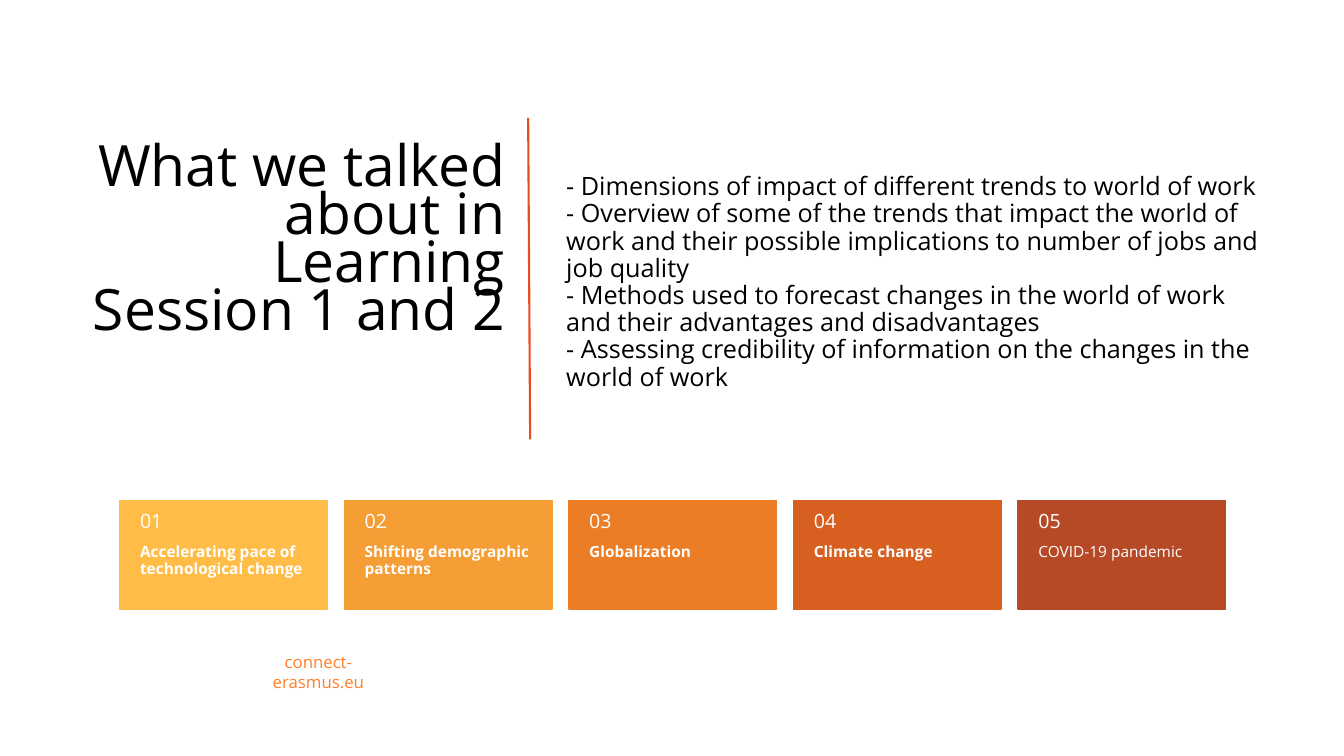
from lxml import etree
from pptx import Presentation
from pptx.dml.color import RGBColor
from pptx.enum import shapes, text
from pptx.oxml import ns
from pptx.util import Cm, Pt

FONT = "Open Sans"
COLOURS = {"text": "000000", "card text": "FFFFFF", "link": "FF7F2A", "divider": "E84C22"}

HEADING = "What we talked about in Learning Session 1 and 2"
TOPICS = [
    "- Dimensions of impact of different trends to world of work",
    "- Overview of some of the trends that impact the world of work and their "
    "possible implications to number of jobs and job quality",
    "- Methods used to forecast changes in the world of work and their advantages "
    "and disadvantages",
    "- Assessing credibility of information on the changes in the world of work",
]
# Label, fill colour, bold
TRENDS = [
    ("Accelerating pace of technological change", "FFBD47", True),
    ("Shifting demographic patterns", "F69E36", True),
    ("Globalization", "EB7D26", True),
    ("Climate change", "D75F20", True),
    ("COVID-19 pandemic", "B64926", False),
]

CARD_LEFT, CARD_TOP, CARD_WIDTH, CARD_HEIGHT = 3.02, 12.62, 5.23, 2.73
CARD_PITCH = 5.66
NUMBER_HEIGHT = 1.09
NUMBER_MARGINS = (0.51, 0.46, 0.51, 0.46)
LABEL_MARGINS = (0.51, 0, 0.51, 0.91)


def set_attributes(target, values):
    for name, value in values.items():
        setattr(target, name, value)


def place(shape, left, top, width, height):
    set_attributes(shape, {"left": Cm(left), "top": Cm(top),
                           "width": Cm(width), "height": Cm(height)})


def remove_bullet(paragraph):
    properties = paragraph._p.get_or_add_pPr()
    properties.set("marL", "0")
    properties.set("indent", "0")
    etree.SubElement(properties, ns.qn("a:buNone"))


def write(shape, lines, size, colour="text", bold=False, anchor=text.MSO_ANCHOR.TOP,
          alignment=text.PP_ALIGN.LEFT, spacing=1.0, margins=(0.25, 0.13, 0.25, 0.13)):
    """Fill a shape with one formatted paragraph per line."""
    frame = shape.text_frame
    frame.text = "\n".join(lines)
    left, top, right, bottom = map(Cm, margins)
    set_attributes(frame, {"word_wrap": True, "auto_size": text.MSO_AUTO_SIZE.NONE,
                           "vertical_anchor": anchor, "margin_left": left,
                           "margin_top": top, "margin_right": right,
                           "margin_bottom": bottom})
    for paragraph in frame.paragraphs:
        remove_bullet(paragraph)
        set_attributes(paragraph, {"alignment": alignment, "line_spacing": spacing,
                                   "space_before": Pt(0), "space_after": Pt(0)})
        font = paragraph.runs[0].font
        set_attributes(font, {"name": FONT, "size": Pt(size), "bold": bold})
        font.color.rgb = RGBColor.from_string(COLOURS[colour])


def add_text(slide, box, lines, size, **formats):
    write(slide.shapes.add_textbox(*map(Cm, box)), lines, size, **formats)


def add_divider(slide):
    line = slide.shapes.add_connector(shapes.MSO_CONNECTOR.STRAIGHT,
                                      Cm(13.31), Cm(2.97), Cm(13.36), Cm(11.07))
    line.line.color.rgb = RGBColor.from_string(COLOURS["divider"])
    line.line.width = Pt(1.5)
    etree.SubElement(line._element.spPr, ns.qn("a:effectLst"))


def add_trend_card(slide, index, label, fill, bold):
    left = CARD_LEFT + index * CARD_PITCH
    card = slide.shapes.add_shape(shapes.MSO_SHAPE.RECTANGLE, Cm(left), Cm(CARD_TOP),
                                  Cm(CARD_WIDTH), Cm(CARD_HEIGHT))
    card.shadow.inherit = False
    card.fill.solid()
    card.fill.fore_color.rgb = RGBColor.from_string(fill)
    card.line.color.rgb = RGBColor.from_string(fill)
    card.line.width = Pt(1)

    label_box = (left, CARD_TOP + NUMBER_HEIGHT, CARD_WIDTH, CARD_HEIGHT - NUMBER_HEIGHT)
    add_text(slide, label_box, [label], 11, colour="card text", bold=bold,
             spacing=0.9, margins=LABEL_MARGINS)
    add_text(slide, (left, CARD_TOP, CARD_WIDTH, NUMBER_HEIGHT), [f"{index + 1:02}"], 14,
             colour="card text", anchor=text.MSO_ANCHOR.MIDDLE, spacing=0.9,
             margins=NUMBER_MARGINS)


def main():
    presentation = Presentation()
    presentation.slide_width = Cm(33.87)
    presentation.slide_height = Cm(19.05)
    slide = presentation.slides.add_slide(presentation.slide_layouts[1])

    heading, topics = slide.placeholders
    place(heading, 2.06, 3.48, 10.92, 5.21)
    write(heading, [HEADING], 40.7, anchor=text.MSO_ANCHOR.BOTTOM,
          alignment=text.PP_ALIGN.RIGHT, spacing=0.7)
    place(topics, 14.02, 4.01, 17.98, 5.99)
    write(topics, TOPICS, 18, anchor=text.MSO_ANCHOR.BOTTOM, spacing=0.9)

    add_divider(slide)
    for index, trend in enumerate(TRENDS):
        add_trend_card(slide, index, *trend)
    add_text(slide, (5.79, 16.54, 4.47, 0.76), ["connect-erasmus.eu"], 12, colour="link",
             anchor=text.MSO_ANCHOR.MIDDLE, alignment=text.PP_ALIGN.CENTER)
    presentation.save("out.pptx")


if __name__ == "__main__":
    main()
